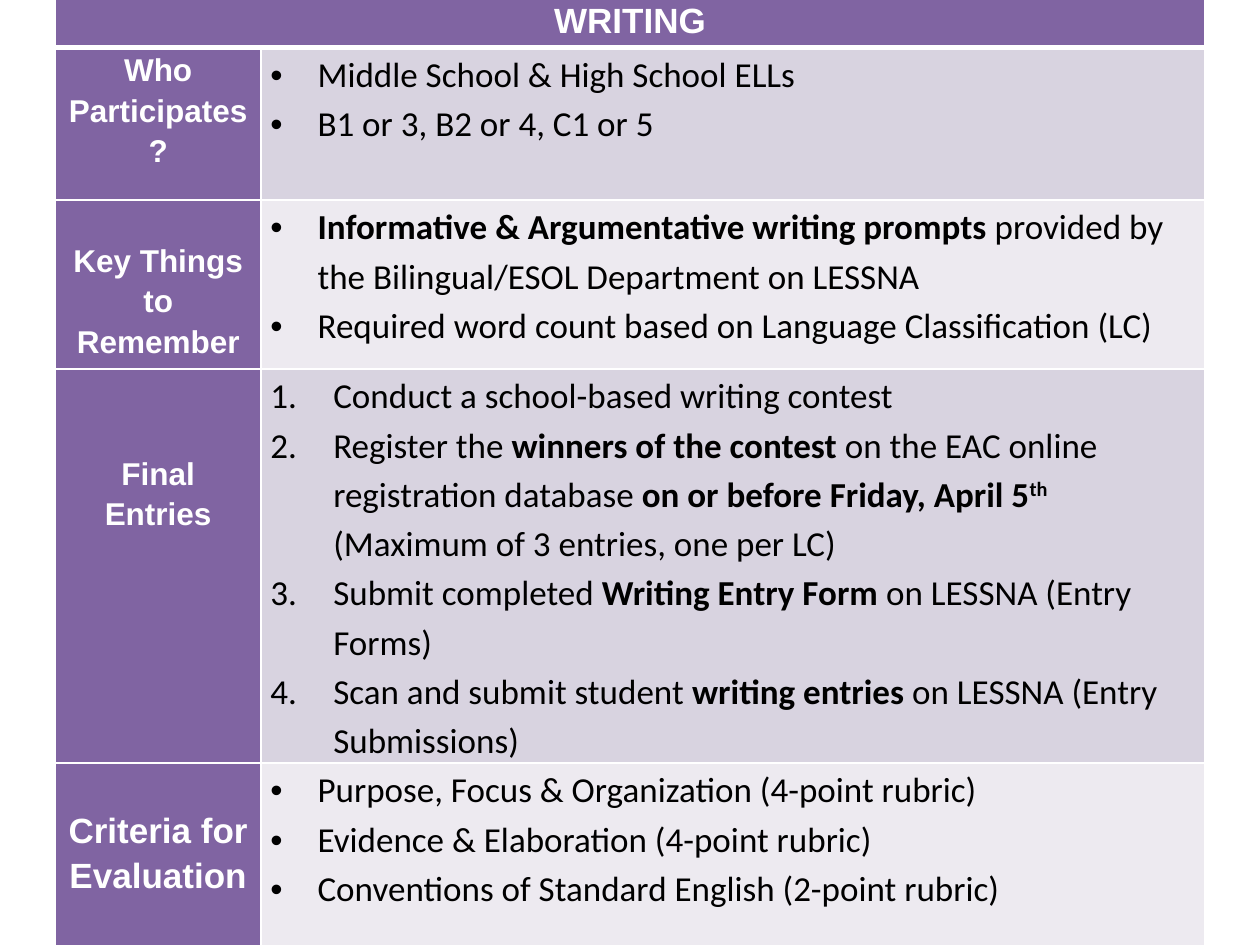
from lxml import etree
from pptx import Presentation
from pptx.dml.color import RGBColor
from pptx.enum.text import PP_ALIGN
from pptx.oxml.ns import qn
from pptx.util import Pt

CENTER, LEFT = PP_ALIGN.CENTER, PP_ALIGN.LEFT
COLORS = {"head": "8064A2", "dark": "D8D3E0", "light": "EDEAF0",
          "white": "FFFFFF", "black": "000000"}
COLUMNS = [117.4, 539.3]
ROWS = [29.5, 87.1, 96.5, 187.9, 110.2]
BULLET = ("buChar", {"char": "•"}, 27)
NUMBER = ("buAutoNum", {"type": "arabicPeriod"}, 36)

# Each section: label, label size, space above label, list style, paragraphs.
# A paragraph is a list of (text, format) spans.
BOLD = {"bold": True}
SECTIONS = [
    ("Who Participates?", 18, 0, BULLET, [
        [("Middle School & High School ELLs", {})],
        [("B1 or 3, B2 or 4, C1 or 5", {})],
    ]),
    ("Key Things to Remember", 18, 22, BULLET, [
        [("Informative & Argumentative writing prompts ", BOLD),
         ("provided by the Bilingual/ESOL Department on LESSNA", {})],
        [("Required word count based on Language Classification (LC)", {})],
    ]),
    ("Final Entries", 18, 47, NUMBER, [
        [("Conduct a school-based writing contest", {})],
        [("Register the ", {}), ("winners of the contest ", BOLD),
         ("on the EAC online registration database ", {}),
         ("on or before Friday, April 5", BOLD),
         ("th", {"bold": True, "raised": 30}),
         (" (Maximum of 3 entries, one per LC)", {})],
        [("Submit completed ", {}), ("Writing Entry Form ", BOLD),
         ("on LESSNA (Entry Forms)", {})],
        [("Scan and submit student ", {}), ("writing entries", BOLD),
         (" on LESSNA (Entry Submissions)", {})],
    ]),
    ("Criteria for Evaluation", 20, 24.6, BULLET, [
        [("Purpose, Focus & Organization (4-point rubric)", {})],
        [("Evidence & Elaboration (4-point rubric)", {})],
        [("Conventions of Standard English (2-point rubric)", {})],
    ]),
]


def add_span(para, text, font="Calibri", size=20, color="black", bold=False, raised=0):
    span = para.add_run()
    span.text = text
    span.font.name, span.font.size, span.font.bold = font, Pt(size), bold
    span.font.color.rgb = RGBColor.from_string(COLORS[color])
    if raised:
        span.font._element.set("baseline", str(raised * 1000))


class TablePage:
    def __init__(self, page):
        self.page = page
        self.spacing = 1.15
        self.inset = 5.4

    def table(self, left, top, height):
        frame = self.page.shapes.add_table(len(ROWS), len(COLUMNS), Pt(left), Pt(top),
                                           Pt(sum(COLUMNS)), Pt(height))
        table = frame.table
        table.first_row = table.horz_banding = False
        for column, width in zip(table.columns, COLUMNS):
            column.width = Pt(width)
        for row, row_height in zip(table.rows, ROWS):
            row.height = Pt(row_height)
        return table

    def cell(self, cell, fill, lead=0, top=1, bottom=1):
        cell.margin_left = cell.margin_right = Pt(self.inset)
        cell.margin_top, cell.margin_bottom = Pt(lead), Pt(0)
        # Borders come before the fill in the cell properties
        properties = cell._tc.get_or_add_tcPr()
        for side, width in (("L", 1), ("R", 1), ("T", top), ("B", bottom)):
            line = etree.SubElement(properties, qn(f"a:ln{side}"), w=str(Pt(width)))
            solid = etree.SubElement(line, qn("a:solidFill"))
            etree.SubElement(solid, qn("a:srgbClr"), val=COLORS["white"])
        cell.fill.solid()
        cell.fill.fore_color.rgb = RGBColor.from_string(COLORS[fill])

    def label(self, cell, text, size):
        para = cell.text_frame.paragraphs[0]
        para.alignment, para.line_spacing = CENTER, self.spacing
        add_span(para, text, font="Arial", size=size, color="white", bold=True)

    def items(self, cell, style, paragraphs):
        tag, attributes, indent = style
        frame = cell.text_frame
        for index, spans in enumerate(paragraphs):
            para = frame.add_paragraph() if index else frame.paragraphs[0]
            para.alignment, para.line_spacing = LEFT, self.spacing
            properties = para._p.get_or_add_pPr()
            properties.set("marL", str(Pt(indent)))
            properties.set("indent", str(-Pt(indent)))
            if style is BULLET:
                etree.SubElement(properties, qn("a:buFont"), typeface="Arial")
            etree.SubElement(properties, qn(f"a:{tag}"), attributes)
            for text, options in spans:
                add_span(para, text, **options)


def main():
    deck = Presentation()
    deck.slide_width, deck.slide_height = Pt(720), Pt(540)
    sheet = TablePage(deck.slides.add_slide(deck.slide_layouts[6]))
    table = sheet.table(31.7, -2.2, 542.2)

    # Title row across both columns
    title = table.cell(0, 0)
    title.merge(table.cell(0, 1))
    for column in range(len(COLUMNS)):
        sheet.cell(table.cell(0, column), "head", bottom=3)
    sheet.label(title, "WRITING", 20)

    # One row per section, with alternating body fills
    for row, (label, size, lead, style, paragraphs) in enumerate(SECTIONS, 1):
        name, body = table.cell(row, 0), table.cell(row, 1)
        top = 3 if row == 1 else 1
        sheet.cell(name, "head", lead=lead, top=top)
        sheet.label(name, label, size)
        sheet.cell(body, "dark" if row % 2 else "light", top=top)
        sheet.items(body, style, paragraphs)

    deck.save("out.pptx")


if __name__ == "__main__":
    main()
